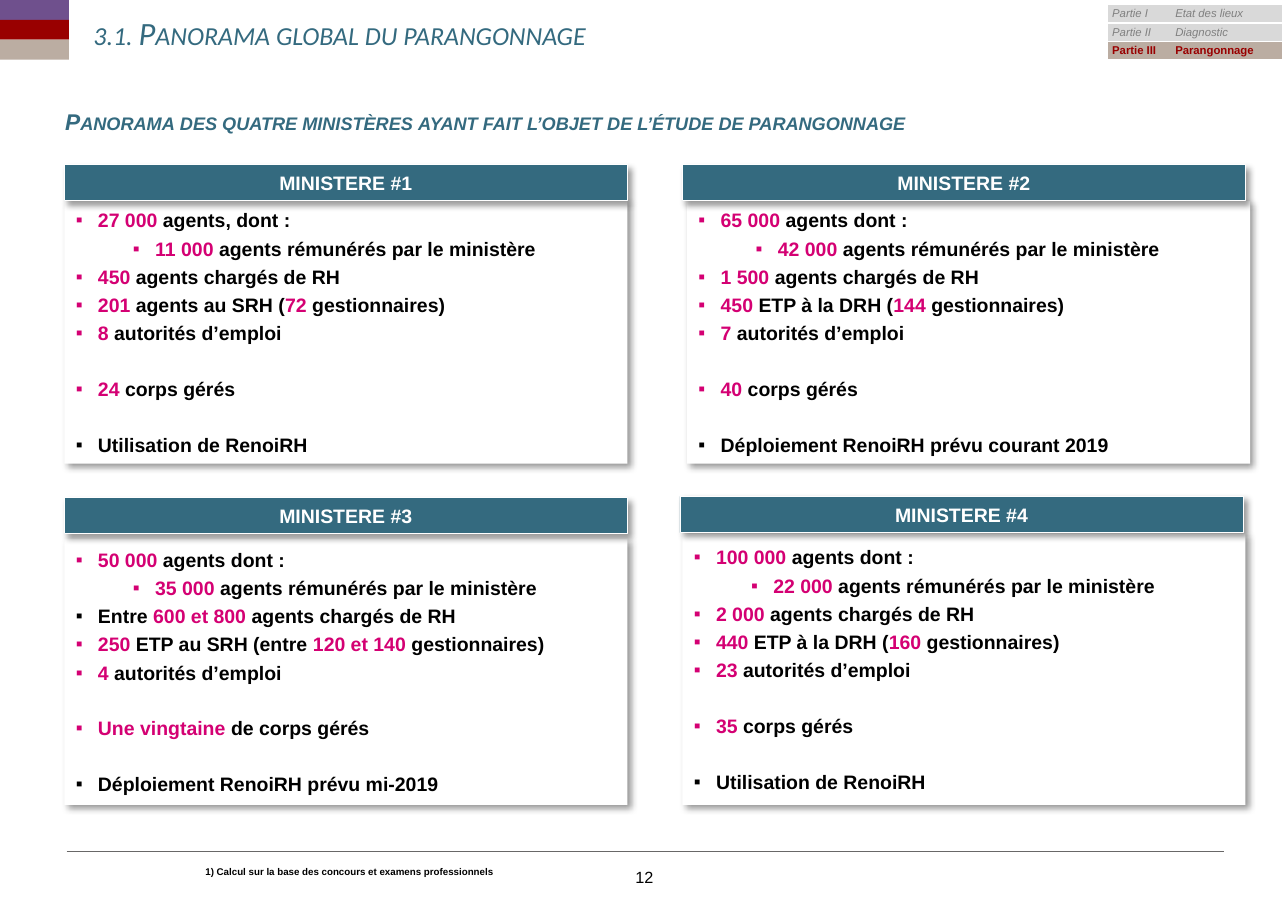
from dataclasses import dataclass

from lxml.etree import SubElement
from pptx import Presentation
from pptx.dml.color import RGBColor
from pptx.enum.shapes import MSO_CONNECTOR, MSO_SHAPE
from pptx.enum.text import MSO_ANCHOR, MSO_AUTO_SIZE, PP_ALIGN
from pptx.oxml import parse_xml
from pptx.oxml.ns import nsdecls, qn
from pptx.util import Emu, Inches, Pt

SLIDE_WIDTH, SLIDE_HEIGHT = Emu(10080625), Emu(7200900)
TEAL, PINK, BLACK, WHITE = "346A7F", "D40073", "000000", "FFFFFF"
GREY, DARK_RED, BEIGE = "D9D9D9", "990000", "BBADA2"
CARD_WIDTH, HEADER_HEIGHT = 4.82, 0.31
INDENTED_LINE = 1
SPACED_LINES = (5, 6)


@dataclass
class Ministry:
    """Highlighted words stand between asterisks."""
    name: str
    header: tuple[float, float]
    body: tuple[float, float, float]  # left, top, height
    lines: tuple[str, ...]


@dataclass
class Part:
    number: str
    title: str
    fill: str = GREY
    color: str = "808080"
    current: bool = False


MINISTRIES = [
    Ministry("MINISTERE #1", (0.55, 1.41), (0.55, 1.72, 2.25), (
        "*27 000* agents, dont :", "*11 000* agents rémunérés par le ministère",
        "*450* agents chargés de RH", "*201* agents au SRH (*72* gestionnaires)",
        "*8* autorités d’emploi", "*24* corps gérés", "Utilisation de RenoiRH")),
    Ministry("MINISTERE #2", (5.84, 1.41), (5.88, 1.72, 2.25), (
        "*65 000* agents dont :", "*42 000* agents rémunérés par le ministère",
        "*1 500* agents chargés de RH", "*450* ETP à la DRH (*144* gestionnaires)",
        "*7* autorités d’emploi", "*40* corps gérés",
        "Déploiement RenoiRH prévu courant 2019")),
    Ministry("MINISTERE #3", (0.55, 4.26), (0.55, 4.61, 2.28), (
        "*50 000* agents dont :", "*35 000* agents rémunérés par le ministère",
        "Entre *600 et 800* agents chargés de RH",
        "*250* ETP au SRH (entre *120 et 140* gestionnaires)",
        "*4* autorités d’emploi", "*Une vingtaine* de corps gérés",
        "Déploiement RenoiRH prévu mi-2019")),
    Ministry("MINISTERE #4", (5.82, 4.25), (5.84, 4.57, 2.32), (
        "*100 000* agents dont :", "*22 000* agents rémunérés par le ministère",
        "*2 000* agents chargés de RH", "*440* ETP à la DRH (*160* gestionnaires)",
        "*23* autorités d’emploi", "*35* corps gérés", "Utilisation de RenoiRH")),
]
PARTS = [
    Part("Partie I", "Etat des lieux"),
    Part("Partie II", "Diagnostic"),
    Part("Partie III", "Parangonnage", BEIGE, DARK_RED, True),
]


def rgb(color: str) -> RGBColor:
    return RGBColor.from_string(color)


def add_run(paragraph, text: str, size: float, color: str = BLACK, small_caps: bool = False, **extra) -> None:
    run = paragraph.add_run()
    run.text = text
    run.font.color.rgb = rgb(color)
    font_format = {"name": "Arial", "size": Pt(size), "bold": False, "italic": False} | extra
    for attribute, value in font_format.items():
        setattr(run.font, attribute, value)
    if small_caps:
        run.font._element.set("cap", "small")


def add_rectangle(slide, left: float, top: float, width: float, height: float,
                  fill: str, line: str = "", shadow: bool = False):
    shape = slide.shapes.add_shape(
        MSO_SHAPE.RECTANGLE, Inches(left), Inches(top), Inches(width), Inches(height))
    shape.fill.solid()
    shape.fill.fore_color.rgb = rgb(fill)
    if line:
        shape.line.color.rgb = rgb(line)
        shape.line.width = Pt(0.5)
    else:
        shape.line.fill.background()
    shape.shadow.inherit = False
    if shadow:
        effects = shape._element.spPr.find(qn("a:effectLst"))
        effects.append(parse_xml(
            f'<a:outerShdw {nsdecls("a")} blurRad="{Pt(4)}" dist="{Pt(3)}" dir="2700000" '
            f'algn="tl" rotWithShape="0"><a:srgbClr val="{BLACK}"><a:alpha val="40000"/>'
            '</a:srgbClr></a:outerShdw>'))
    shape.text_frame.word_wrap = True
    shape.text_frame.vertical_anchor = MSO_ANCHOR.MIDDLE
    return shape


def add_text(slide, left: float, top: float, width: float, height: float, text: str,
             size: float, align=PP_ALIGN.LEFT, anchor=MSO_ANCHOR.TOP, **font) -> None:
    frame = slide.shapes.add_textbox(
        Inches(left), Inches(top), Inches(width), Inches(height)).text_frame
    frame.word_wrap = True
    frame.vertical_anchor = anchor
    frame.paragraphs[0].alignment = align
    add_run(frame.paragraphs[0], text, size, **font)


def add_bullet(paragraph, indent: float) -> None:
    properties = paragraph._p.get_or_add_pPr()
    properties.set("marL", str(Inches(indent)))
    properties.set("indent", str(Inches(-0.19)))
    SubElement(properties, qn("a:buFont")).set("typeface", "Arial")
    SubElement(properties, qn("a:buChar")).set("char", "▪")


def add_body(slide, ministry: Ministry) -> None:
    left, top, height = ministry.body
    frame = add_rectangle(slide, left, top, CARD_WIDTH, height, WHITE, shadow=True).text_frame
    for index, line in enumerate(ministry.lines):
        paragraph = frame.add_paragraph() if index else frame.paragraphs[0]
        indented = index == INDENTED_LINE
        add_bullet(paragraph, 0.68 if indented else 0.19)
        paragraph.level = int(indented)
        paragraph.alignment = PP_ALIGN.LEFT
        if index:
            paragraph.space_before = Pt(20 if index in SPACED_LINES else 3)
        for position, piece in enumerate(line.split("*")):
            if piece:
                add_run(paragraph, piece, 12, PINK if position % 2 else BLACK, bold=True)


def add_header(slide, ministry: Ministry) -> None:
    shape = add_rectangle(slide, *ministry.header, CARD_WIDTH, HEADER_HEIGHT, TEAL, WHITE, True)
    paragraph = shape.text_frame.paragraphs[0]
    paragraph.alignment = PP_ALIGN.CENTER
    add_run(paragraph, ministry.name, 12, WHITE, bold=True)


def add_borders(cell, inner_side: str) -> None:
    for position, side in enumerate("LRTB"):
        paint = ("<a:noFill/>" if side == inner_side
                 else f'<a:solidFill><a:srgbClr val="{WHITE}"/></a:solidFill>')
        cell._tc.get_or_add_tcPr().insert(position, parse_xml(
            f'<a:ln{side} {nsdecls("a")} w="{Pt(1)}">{paint}</a:ln{side}>'))


def add_parts_table(slide) -> None:
    table = slide.shapes.add_table(
        len(PARTS), 2, Inches(9.48), Inches(0.04), Inches(1.5), Inches(0.47)).table
    table.first_row = table.horz_banding = False
    for column, width in zip(table.columns, (0.54, 0.96)):
        column.width = Inches(width)
    margins = {"margin_left": 0.04, "margin_right": 0.04, "margin_top": 0.02, "margin_bottom": 0.02}
    for row, part in enumerate(PARTS):
        for column, text in enumerate((part.number, part.title)):
            cell = table.cell(row, column)
            for attribute, value in margins.items():
                setattr(cell, attribute, Inches(value))
            cell.vertical_anchor = MSO_ANCHOR.MIDDLE
            cell.fill.solid()
            cell.fill.fore_color.rgb = rgb(part.fill)
            add_borders(cell, "RL"[column])
            add_run(cell.text_frame.paragraphs[0], text, 7, part.color,
                    bold=part.current, italic=not part.current)


def main() -> None:
    presentation = Presentation()
    presentation.slide_width, presentation.slide_height = SLIDE_WIDTH, SLIDE_HEIGHT
    slide = presentation.slides.add_slide(presentation.slide_layouts[5])

    # Corner stripes and footer rule
    for index, color in enumerate(("6F508D", DARK_RED, BEIGE)):
        add_rectangle(slide, 0, index * 0.17, 0.59, 0.17, color)
    rule = slide.shapes.add_connector(
        MSO_CONNECTOR.STRAIGHT, Inches(0.57), Inches(7.29), Inches(10.48), Inches(7.29))
    rule.line.color.rgb = rgb("686767")
    rule.line.width = Pt(0.75)
    SubElement(rule._element.spPr, qn("a:effectLst"))

    # Title
    title = slide.shapes.title
    title_box = {"left": 0.7, "top": 0.05, "width": 9.77, "height": 0.46}
    for attribute, value in title_box.items():
        setattr(title, attribute, Inches(value))
    title.text_frame.auto_size = MSO_AUTO_SIZE.NONE
    title.text_frame.vertical_anchor = MSO_ANCHOR.MIDDLE
    title.text_frame.paragraphs[0].alignment = PP_ALIGN.LEFT
    add_run(title.text_frame.paragraphs[0], "3.1. Panorama global du parangonnage", 20, TEAL,
            small_caps=True, name="Calibri", italic=True)

    # Subtitle, footnote and page number
    add_text(slide, 0.46, 0.87, 10.24, 0.34,
             "Panorama des quatre ministères ayant fait l’objet de l’étude de parangonnage",
             14, PP_ALIGN.JUSTIFY, color=TEAL, small_caps=True, bold=True, italic=True)
    add_text(slide, 1.66, 7.36, 2.83, 0.2,
             "1) Calcul sur la base des concours et examens professionnels", 6, bold=True)
    add_text(slide, 4.78, 7.3, 1.47, 0.42, "12", 10, PP_ALIGN.CENTER, MSO_ANCHOR.MIDDLE)

    # Ministry cards, headers over bodies
    for draw in (add_body, add_header):
        for ministry in MINISTRIES:
            draw(slide, ministry)

    # Progress table
    add_parts_table(slide)
    presentation.save("out.pptx")


if __name__ == "__main__":
    main()
